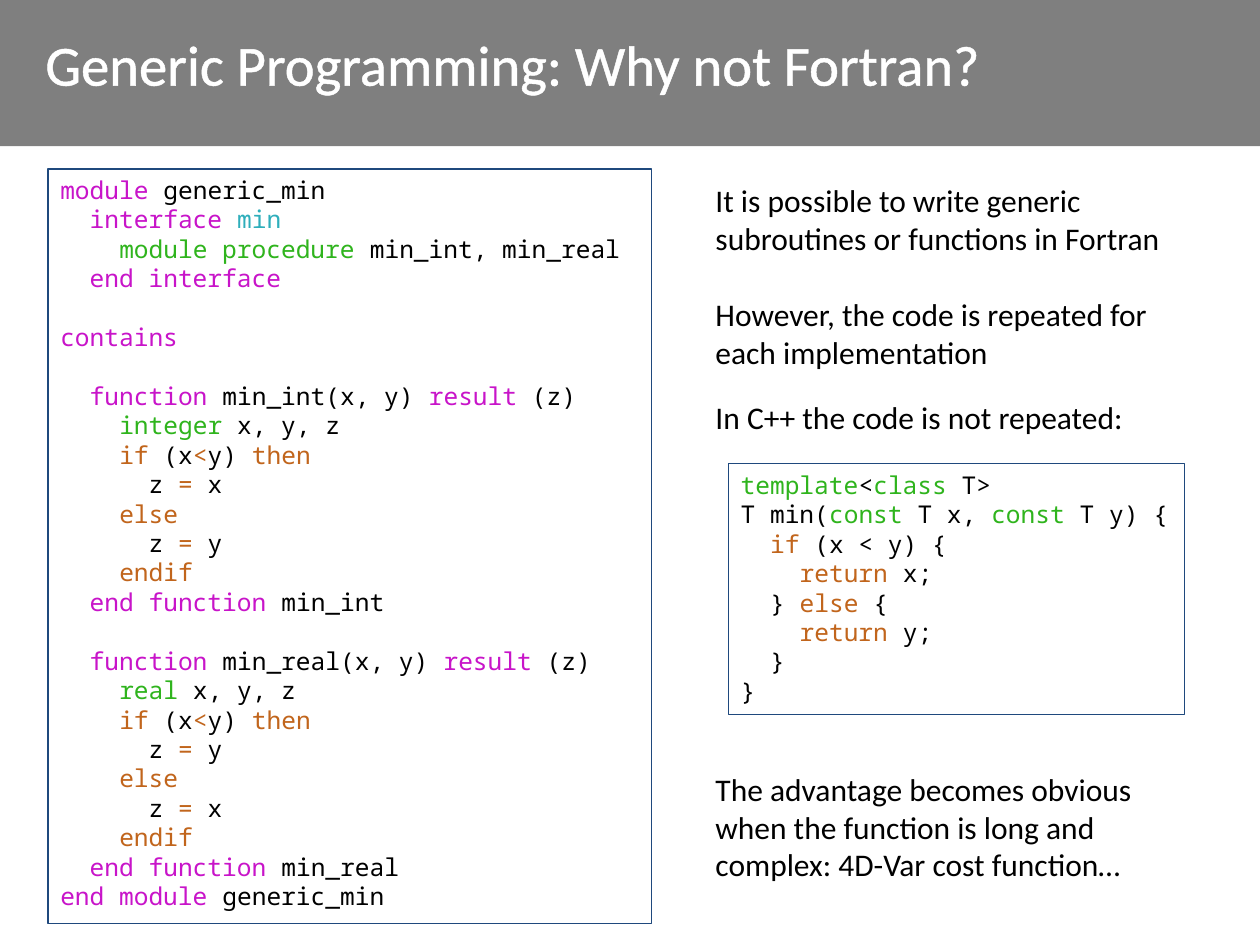
from lxml import etree
from pptx import Presentation
from pptx.dml.color import RGBColor
from pptx.enum.shapes import MSO_SHAPE
from pptx.enum.text import MSO_ANCHOR, PP_ALIGN
from pptx.oxml.ns import qn
from pptx.util import Inches, Pt

BODY, MONO = "Calibri", "Noto Sans Mono"
BLACK, WHITE, NAVY = "000000", "FFFFFF", "1F497D"
SYNTAX = {"m": "C814C9", "g": "2FB41D", "o": "C1651C", "t": "2EAEBB"}


def rgb(color):
    return RGBColor.from_string(color)


def add_run(p, text, size, font, color):
    r = p.add_run()
    r.text = text
    r.font.size = Pt(size)
    r.font.name = font
    r.font.color.rgb = rgb(color)
    return r


def add_rect(s, box):
    sp = s.shapes.add_shape(MSO_SHAPE.RECTANGLE, *map(Inches, box))
    sp.shadow.inherit = False
    return sp


def add_header(s, band_box, title_box, text):
    band = add_rect(s, band_box)
    band.fill.solid()
    band.fill.fore_color.rgb = rgb(BLACK)
    band.line.fill.background()
    color = band.fill._xPr.find(qn("a:solidFill"))[0]
    etree.SubElement(color, qn("a:alpha"), val="50000")
    s.shapes._spTree.insert(2, band._element)

    title = s.shapes.title
    title.left, title.top, title.width, title.height = map(Inches, title_box)
    tf = title.text_frame
    tf.vertical_anchor = MSO_ANCHOR.MIDDLE
    p = tf.paragraphs[0]
    p.alignment = PP_ALIGN.LEFT
    r = add_run(p, text, 32.4, BODY, WHITE)
    outline = etree.Element(qn("a:ln"), w=str(Pt(1.45)))
    fill = etree.SubElement(outline, qn("a:solidFill"))
    etree.SubElement(fill, qn("a:srgbClr"), val=WHITE)
    r.font._element.insert(0, outline)


def add_text(s, box, *paragraphs):
    tf = s.shapes.add_textbox(*map(Inches, box)).text_frame
    tf.word_wrap = True
    for i, text in enumerate(paragraphs):
        p = tf.add_paragraph() if i else tf.paragraphs[0]
        if i:
            p.space_before = Pt(22)
        add_run(p, text, 18, BODY, BLACK)


def add_code(s, box, blocks, wrap=True):
    sp = add_rect(s, box)
    sp.fill.background()
    sp.line.color.rgb = rgb(NAVY)
    sp.line.width = Pt(0.75)
    tf = sp.text_frame
    tf.word_wrap = wrap
    tf.vertical_anchor = MSO_ANCHOR.TOP
    p = tf.paragraphs[0]
    for b, block in enumerate(blocks):
        for i, line in enumerate(block):
            if b or i:
                p = tf.add_paragraph()
            if b and not i:
                p.space_before = Pt(16.8)
            p.alignment = PP_ALIGN.LEFT
            for n, part in enumerate(line.split("`")):
                if n % 2:
                    add_run(p, part[2:], 14, MONO, SYNTAX[part[0]])
                elif part:
                    add_run(p, part, 14, MONO, BLACK)


def fortran_min(kind, if_less, otherwise):
    name = "min_int" if kind == "integer" else f"min_{kind}"
    return [
        f"  `m:function `{name}(x, y) `m:result` (z)",
        f"    `g:{kind}` x, y, z",
        "    `o:if` (x`o:<`y) `o:then`",
        f"      z `o:=` {if_less}",
        "    `o:else`",
        f"      z `o:=` {otherwise}",
        "    `o:endif`",
        f"  `m:end function `{name}",
    ]


FORTRAN = [
    [
        "`m:module `generic_min",
        "  `m:interface ``t:min`",
        "    `g:module procedure `min_int, min_real",
        "  `m:end interface`",
    ],
    ["`m:contains`"],
    fortran_min("integer", "x", "y"),
    fortran_min("real", "y", "x") + ["`m:end module `generic_min"],
]
CPP = [[
    "`g:template`<`g:class` T>",
    "T min(`g:const` T x, `g:const` T y) {",
    "  `o:if` (x < y) {",
    "    `o:return` x;",
    "  } `o:else` {",
    "    `o:return` y;",
    "  }",
    "}",
]]


def main():
    prs = Presentation()
    prs.slide_width, prs.slide_height = Inches(10), Inches(7.5)
    s = prs.slides.add_slide(prs.slide_layouts[5])
    add_header(s, (0, 0, 10, 1.16), (0.26, 0, 8.31, 1),
               "Generic Programming: Why not Fortran?")
    add_code(s, (0.38, 1.34, 4.79, 5.99), FORTRAN)
    add_text(s, (5.58, 1.39, 4.05, 1.62),
             "It is possible to write generic subroutines or functions in Fortran",
             "However, the code is repeated for each implementation")
    add_code(s, (5.78, 3.68, 3.62, 1.99), CPP, wrap=False)
    add_text(s, (5.58, 3.11, 4.05, 0.4), "In C++ the code is not repeated:")
    add_text(s, (5.58, 6.06, 4.05, 1.01),
             "The advantage becomes obvious when the function is long and "
             "complex: 4D-Var cost function…")
    prs.save("out.pptx")


if __name__ == "__main__":
    main()
